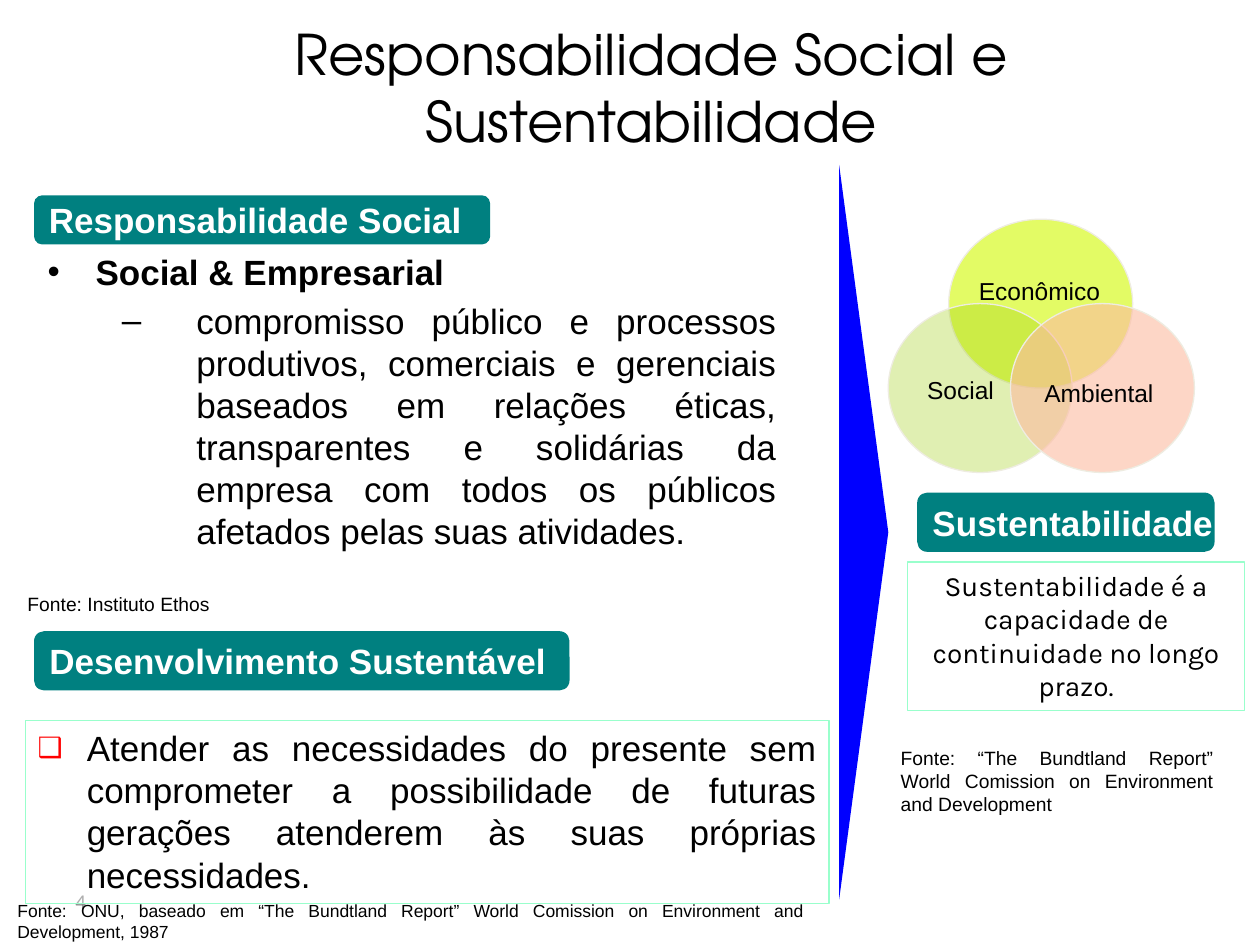
from lxml.etree import SubElement
from pptx import Presentation
from pptx.dml.color import RGBColor
from pptx.enum.shapes import MSO_SHAPE as Shape
from pptx.enum.text import MSO_ANCHOR as Anchor, MSO_AUTO_SIZE as AutoSize, PP_ALIGN as Align
from pptx.oxml.ns import qn
from pptx.util import Pt

EMU_PER_PX = 9144  # 100 px to the inch
TEAL, MINT, BLUE, WHITE, BLACK = "008080", "99FFCC", "0000FF", "FFFFFF", "000000"


def px(length):
    return length * EMU_PER_PX


def rgb(hex_color):
    return RGBColor.from_string(hex_color)


class SlideBuilder:
    font = "Arial"

    def __init__(self, slide):
        self.slide = slide

    def shape(self, kind, box, fill, opacity=100, line=None):
        """Preset shape with an optional see-through fill and thin outline."""
        shape = self.slide.shapes.add_shape(kind, *map(px, box))
        shape.shadow.inherit = False
        shape.fill.solid()
        shape.fill.fore_color.rgb = rgb(fill)
        if opacity < 100:
            color = shape.fill._xPr.find(qn("a:solidFill"))[0]
            SubElement(color, qn("a:alpha"), val=str(opacity * 1000))
        if line:
            shape.line.color.rgb = rgb(line)
            shape.line.width = Pt(0.75)
        else:
            shape.line.fill.background()
        return shape

    def set_text(self, shape, text, size, align=Align.LEFT, color=BLACK, font=None,
                 bold=False, anchor=Anchor.TOP, wrap=True):
        """Fill a shape with paragraphs, one per line of text."""
        frame = shape.text_frame
        frame.text = text
        frame.word_wrap = wrap
        frame.auto_size = AutoSize.NONE
        frame.vertical_anchor = anchor
        for paragraph in frame.paragraphs:
            paragraph.alignment = align
            for run in paragraph.runs:
                run.font.name = font or self.font
                run.font.size = Pt(size)
                run.font.bold = bold
                run.font.color.rgb = rgb(color)
        return frame.paragraphs

    def text(self, box, text, size, **style):
        return self.set_text(self.slide.shapes.add_textbox(*map(px, box)), text, size, **style)

    def panel(self, box, text, size, line=None, **style):
        panel = self.shape(Shape.RECTANGLE, box, WHITE, 30, line)
        return self.set_text(panel, text, size, **style)

    def heading(self, box, text):
        heading = self.shape(Shape.ROUNDED_RECTANGLE, box, TEAL)
        self.set_text(heading, text, 20, color=WHITE, bold=True, anchor=Anchor.MIDDLE, wrap=False)

    def bullet(self, paragraph, char, indent, hanging, color=None, percent=100):
        properties = paragraph._p.get_or_add_pPr()
        properties.set("marL", str(px(indent)))
        properties.set("indent", str(-px(hanging)))
        if color:
            SubElement(SubElement(properties, qn("a:buClr")), qn("a:srgbClr"), val=color)
        SubElement(properties, qn("a:buSzPct"), val=str(percent * 1000))
        SubElement(properties, qn("a:buFont"), typeface=self.font)
        SubElement(properties, qn("a:buChar"), char=char)


def main():
    deck = Presentation()
    deck.slide_width, deck.slide_height = px(1000), px(750)
    page = SlideBuilder(deck.slides.add_slide(deck.slide_layouts[6]))

    page.text((50, 695, 233, 40), "4", 12, color="8C8C8C", font="Calibri", anchor=Anchor.MIDDLE)
    page.text((67, 6, 900, 125), "Responsabilidade Social e Sustentabilidade", 32,
              align=Align.CENTER, font="TeX Gyre Adventor", anchor=Anchor.MIDDLE)

    topic, commitment = page.panel(
        (28, 194, 598, 276),
        "Social & Empresarial\n"
        "compromisso público e processos produtivos, comerciais e gerenciais baseados em "
        "relações éticas, transparentes e solidárias da empresa com todos os públicos "
        "afetados pelas suas atividades.",
        20, align=Align.JUSTIFY)
    topic.runs[0].font.bold = True
    page.bullet(topic, "•", 38, 38)
    commitment.level = 1
    commitment.space_before = Pt(4)
    page.bullet(commitment, "–", 118, 59)
    page.text((12, 465, 166, 29), "Fonte: Instituto Ethos", 11, wrap=False)

    [definition] = page.panel(
        (20, 572, 638, 145),
        "Atender as necessidades do presente sem comprometer a possibilidade de futuras "
        "gerações atenderem às suas próprias necessidades.",
        20, line=MINT, align=Align.JUSTIFY)
    page.bullet(definition, "❑", 39, 39, color="FF0000", percent=80)
    page.text((4, 709, 643, 44),
              "Fonte: ONU, baseado em “The Bundtland Report” World Comission on "
              "Environment and Development, 1987", 10, align=Align.JUSTIFY)

    divider = page.shape(Shape.ISOSCELES_TRIANGLE, (394, 403, 583, 39), BLUE)
    divider.rotation = 90

    page.panel((720, 446, 268, 118),
               "Sustentabilidade é a capacidade de continuidade no longo prazo.", 16,
               line=MINT, align=Align.CENTER, font="Karla")
    page.text((705, 587, 268, 66),
              "Fonte: “The Bundtland Report” World Comission on Environment and Development",
              11, align=Align.JUSTIFY)

    for box, title in (
        ((27, 155, 362, 39), "Responsabilidade Social"),
        ((27, 501, 425, 47), "Desenvolvimento Sustentável"),
        ((728, 391, 236, 47), "Sustentabilidade"),
    ):
        page.heading(box, title)

    pillars = (
        ((753, 174), "DCFB3F", 80, (767, 214, 123, 35), "Econômico"),
        ((705, 241), "99CC00", 30, (726, 293, 78, 35), "Social"),
        ((802, 241), "FDBBA1", 60, (819, 295, 118, 35), "Ambiental"),
    )
    for corner, color, opacity, _, _ in pillars:
        page.shape(Shape.OVAL, (*corner, 146, 134), color, opacity, line="EEECE1")
    for *_, label_box, label in pillars:
        page.text(label_box, label, 14, wrap=False)

    deck.save("out.pptx")


if __name__ == "__main__":
    main()
